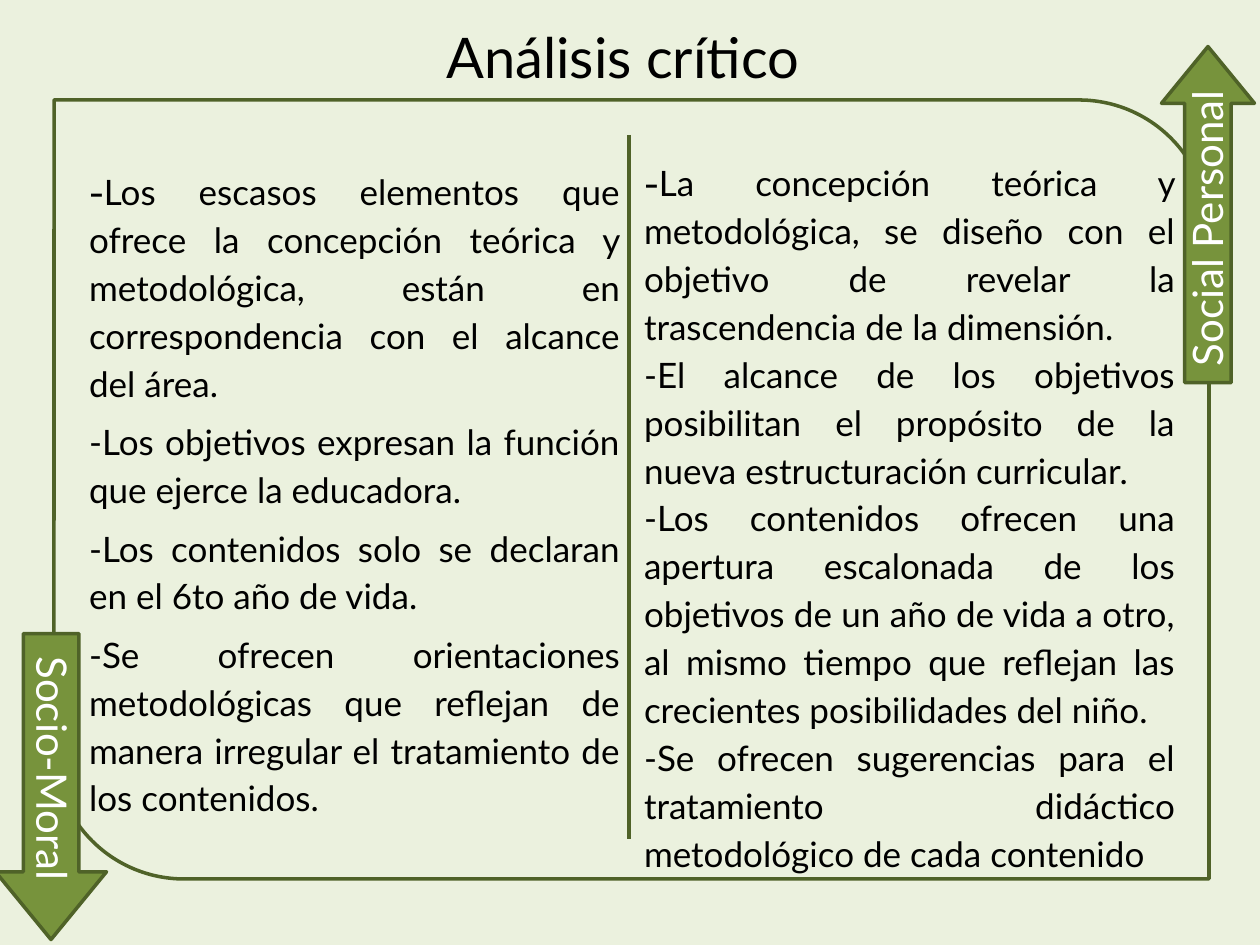
import pptx
import pptx.util
import pptx.dml.color
import pptx.enum.shapes
import pptx.enum.text
import pptx.oxml.ns
from lxml import etree

PALE = pptx.dml.color.RGBColor(0xEB, 0xF1, 0xDE)
GREEN = pptx.dml.color.RGBColor(0x77, 0x93, 0x3C)
DARK = pptx.dml.color.RGBColor(0x4F, 0x62, 0x28)
BLACK = pptx.dml.color.RGBColor(0, 0, 0)
WHITE = pptx.dml.color.RGBColor(0xFF, 0xFF, 0xFF)

SHAPE = pptx.enum.shapes.MSO_SHAPE
ALIGN = pptx.enum.text.PP_ALIGN
ANCHOR = pptx.enum.text.MSO_ANCHOR
DASH = "-"

SOCIO_MORAL = [
    "Los escasos elementos que ofrece la concepción teórica y metodológica, "
    "están en correspondencia con el alcance del área.",
    "Los objetivos expresan la función que ejerce la educadora.",
    "Los contenidos solo se declaran en el 6to año de vida.",
    "Se ofrecen orientaciones metodológicas que reflejan de manera irregular "
    "el tratamiento de los contenidos.",
]
SOCIAL_PERSONAL = [
    "La concepción teórica y metodológica, se diseño con el objetivo de revelar "
    "la trascendencia de la dimensión.",
    "El alcance de los objetivos posibilitan el propósito de la nueva "
    "estructuración curricular.",
    "Los contenidos ofrecen una apertura escalonada de los objetivos de un año "
    "de vida a otro, al mismo tiempo que reflejan las crecientes posibilidades "
    "del niño.",
    "Se ofrecen sugerencias para el tratamiento didáctico metodológico de cada "
    "contenido",
]


def px(length):
    """Turn pixels into EMU."""
    return pptx.util.Emu(round(length * 914400 / 126))


def set_font(font, name, size, color):
    """Set the face, size in points and colour of a font."""
    font.name = name
    font.size = pptx.util.Pt(size)
    font.color.rgb = color


def add_outlined(shapes, preset, box, fill, adjustments, rotation=0):
    """Add a filled preset shape with the dark green outline."""
    outlined = shapes.add_shape(preset, *map(px, box))
    outlined.shadow.inherit = False
    outlined.fill.solid()
    outlined.fill.fore_color.rgb = fill
    outlined.line.color.rgb = DARK
    outlined.line.width = pptx.util.Pt(2)
    for index, value in enumerate(adjustments):
        outlined.adjustments[index] = value
    outlined.rotation = rotation


def add_divider(shapes, x, top, bottom):
    """Add the vertical line between the two columns."""
    divider = shapes.add_connector(
        pptx.enum.shapes.MSO_CONNECTOR.STRAIGHT, px(x), px(top), px(x), px(bottom))
    divider.line.color.rgb = DARK
    divider.line.width = pptx.util.Pt(2)
    etree.SubElement(divider._element.spPr, pptx.oxml.ns.qn("a:effectLst"))


def add_text_frame(shapes, box, inset, rotation=0):
    """Add a wrapping text box and return its text frame."""
    text_box = shapes.add_textbox(*map(px, box))
    text_box.rotation = rotation
    frame = text_box.text_frame
    frame.word_wrap = True
    frame.margin_left = frame.margin_right = px(inset)
    frame.margin_top = frame.margin_bottom = px(inset)
    return frame


def add_column(shapes, box, points, space_after):
    """Add a justified column of dashed points."""
    frame = add_text_frame(shapes, box, 10)
    for index, point in enumerate(points):
        paragraph = frame.add_paragraph() if index else frame.paragraphs[0]
        paragraph.alignment = ALIGN.JUSTIFY
        paragraph.line_spacing = 1.14
        paragraph.space_after = pptx.util.Pt(space_after)
        if index:
            paragraph.text = DASH + point
            set_font(paragraph.font, "Lato", 20, BLACK)
        else:
            for text, face in ((DASH, "Cabin"), (point, "Lato")):
                run = paragraph.add_run()
                run.text = text
                set_font(run.font, face, 20, BLACK)


def add_arrow(shapes, arrow_box, label_box, label, rotation):
    """Add a turned block arrow with its label."""
    add_outlined(shapes, SHAPE.RIGHT_ARROW, arrow_box, GREEN, (0.5, 0.61), rotation)
    frame = add_text_frame(shapes, label_box, 13, rotation)
    frame.vertical_anchor = ANCHOR.MIDDLE
    paragraph = frame.paragraphs[0]
    paragraph.text = label
    paragraph.alignment = ALIGN.CENTER
    paragraph.line_spacing = 0.9
    set_font(paragraph.font, "Lato", 24, WHITE)


def add_title(shapes, box, title):
    """Add the centred slide title."""
    frame = add_text_frame(shapes, box, 6)
    frame.margin_left = frame.margin_right = px(13)
    frame.auto_size = pptx.enum.text.MSO_AUTO_SIZE.SHAPE_TO_FIT_TEXT
    paragraph = frame.paragraphs[0]
    paragraph.text = title
    paragraph.alignment = ALIGN.CENTER
    set_font(paragraph.font, "Lato", 32, BLACK)


def main():
    """Build the slide and save it."""
    presentation = pptx.Presentation()
    presentation.slide_width, presentation.slide_height = px(1260), px(945)
    slide = presentation.slides.add_slide(presentation.slide_layouts[6])
    slide.background.fill.solid()
    slide.background.fill.fore_color.rgb = PALE

    comparison = slide.shapes.add_group_shape().shapes
    add_outlined(comparison, SHAPE.ROUND_2_DIAG_RECTANGLE,
                 (54, 100, 1155, 779), PALE, (0, 0.167))
    add_divider(comparison, 629, 135, 839)
    add_column(comparison, (79, 155, 551, 725), SOCIO_MORAL, 6)
    add_column(comparison, (634, 146, 551, 742), SOCIAL_PERSONAL, 0)
    add_arrow(comparison, (-102, 731, 306, 111), (-86, 741, 272, 55),
              "Socio-Moral", 90)
    add_arrow(comparison, (1040, 168, 336, 93), (1055, 205, 309, 47),
              "Social Personal", 270)
    add_title(slide.shapes, (15, 16, 1216, 81), "Análisis crítico")
    presentation.save("out.pptx")


if __name__ == "__main__":
    main()
